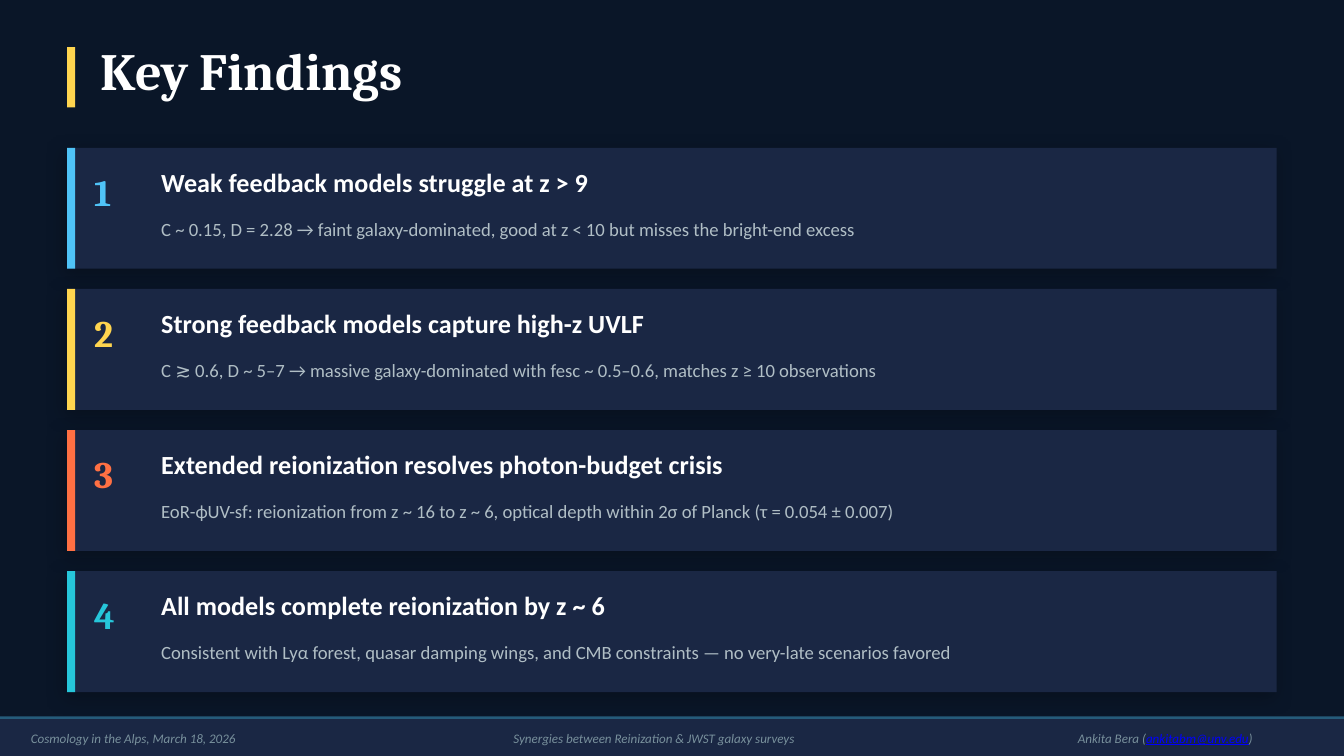
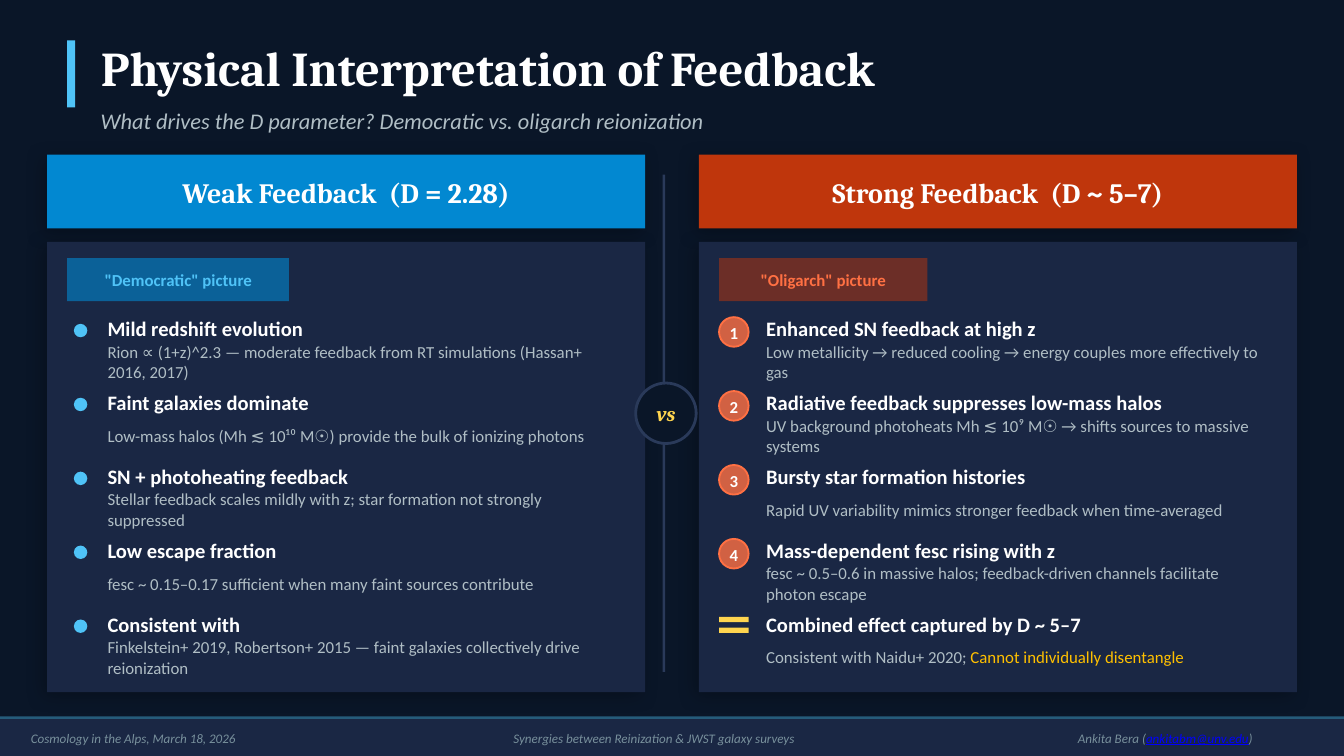
from dataclasses import dataclass

from lxml.etree import SubElement
from pptx import Presentation
from pptx.dml.color import RGBColor
from pptx.enum.shapes import MSO_SHAPE
from pptx.enum.text import MSO_ANCHOR, MSO_AUTO_SIZE, PP_ALIGN
from pptx.oxml.ns import qn
from pptx.util import Pt


@dataclass(frozen=True)
class Theme:
    night: str = "0A1628"
    panel: str = "1A2744"
    rule: str = "2A3A5A"
    white: str = "FFFFFF"
    muted: str = "B0BEC5"
    footer: str = "78909C"
    address: str = "0000FF"
    sky: str = "4FC3F7"
    blue: str = "0288D1"
    yellow: str = "FFD54F"
    amber: str = "FFC000"
    orange: str = "FF7043"
    rust: str = "BF360C"
    teal: str = "26C6DA"
    serif: str = "Cambria"
    sans: str = "Calibri"
    title_size: int = 28
    long_title_size: int = 26
    number_size: int = 20
    header_size: int = 15
    card_size: int = 14
    subtitle_size: int = 12
    point_size: int = 11
    card_detail_size: int = 10
    small_size: int = 9
    footer_size: int = 7


THEME = Theme()
WIDTH, HEIGHT = 720, 405
ACCENT_WIDTH = 4.32


class Deck:
    def __init__(self, theme):
        self.theme = theme
        self.presentation = Presentation()
        self.presentation.slide_width = Pt(WIDTH)
        self.presentation.slide_height = Pt(HEIGHT)
        background = self.presentation.slide_master.background.fill
        background.solid()
        background.fore_color.rgb = RGBColor.from_string(theme.night)
        self.slide = None

    def new_slide(self, title, size, accent, accent_top, accent_height, title_box):
        t = self.theme
        self.slide = self.presentation.slides.add_slide(
            self.presentation.slide_layouts[5])
        self.footer()
        self.block(36, accent_top, ACCENT_WIDTH, accent_height, accent)
        heading = self.slide.shapes.title
        heading.left, heading.top, heading.width, heading.height = map(Pt, title_box)
        self.fill_frame(heading.text_frame, title, size, t.white, font=t.serif,
                        bold=True)

    def block(self, left, top, width, height, color, kind=MSO_SHAPE.RECTANGLE,
              alpha=None, line=None, line_width=1, shadow=False):
        shape = self.slide.shapes.add_shape(
            kind, Pt(left), Pt(top), Pt(width), Pt(height))
        shape.shadow.inherit = False
        shape.fill.solid()
        shape.fill.fore_color.rgb = RGBColor.from_string(color)
        properties = shape._element.spPr
        if alpha:
            fill_color = properties.find(qn("a:solidFill")).find(qn("a:srgbClr"))
            self.set_alpha(fill_color, alpha)
        if line:
            shape.line.color.rgb = RGBColor.from_string(line)
            shape.line.width = Pt(line_width)
        else:
            shape.line.fill.background()
        if shadow:
            outer = SubElement(
                properties.find(qn("a:effectLst")), qn("a:outerShdw"),
                blurRad=str(Pt(10)), dist=str(Pt(3)), dir=str(135 * 60000),
                algn="bl", rotWithShape="0")
            self.set_alpha(SubElement(outer, qn("a:srgbClr"), val="000000"), 25)

    @staticmethod
    def set_alpha(color_element, percent):
        SubElement(color_element, qn("a:alpha"), val=str(percent * 1000))

    def text(self, left, top, width, height, content, size, color, **style):
        box = self.slide.shapes.add_textbox(Pt(left), Pt(top), Pt(width), Pt(height))
        self.fill_frame(box.text_frame, content, size, color, **style)

    def fill_frame(self, frame, content, size, color, font=None, bold=False,
                   italic=False, align=PP_ALIGN.LEFT, inset=0):
        """Fill a frame from a string or from (text, colour, underlined) parts."""
        parts = [(content, color, False)] if isinstance(content, str) else content
        frame.word_wrap = True
        frame.auto_size = MSO_AUTO_SIZE.NONE
        frame.vertical_anchor = MSO_ANCHOR.MIDDLE
        frame.margin_left = frame.margin_right = Pt(inset)
        frame.margin_top = frame.margin_bottom = Pt(inset)
        paragraph = frame.paragraphs[0]
        paragraph.alignment = align
        for words, part_color, underlined in parts:
            run = paragraph.add_run()
            run.text = words
            run.font.name = font or self.theme.sans
            run.font.size = Pt(size)
            run.font.bold = bold
            run.font.italic = italic
            run.font.underline = underlined
            run.font.color.rgb = RGBColor.from_string(part_color)

    def footer(self):
        t = self.theme
        self.block(0, 385.2, WIDTH, 19.8, t.panel)
        self.block(0, 383.76, WIDTH, 1.44, t.sky, alpha=40)
        contact = [("Ankita Bera (", t.footer, False),
                   ("ankitabm@unv.edu", t.address, True),
                   (")", t.footer, False)]
        for left, width, content in (
            (573.84, 113.76, contact),
            (12.96, 176.4, "Cosmology in the Alps, March 18, 2026"),
            (271.44, 176.4, "Synergies between Reinization & JWST galaxy surveys"),
        ):
            self.text(left, 388.08, width, 14.4, content, t.footer_size, t.footer,
                      italic=True, inset=3.6)

    def finding(self, top, number, color, claim, evidence):
        t = self.theme
        self.block(36, top, 648, 64.8, t.panel, shadow=True)
        self.block(36, top, ACCENT_WIDTH, 64.8, color)
        self.text(50.4, top + 12.24, 32.4, 22.32, str(number), t.number_size, color,
                  font=t.serif, bold=True)
        self.text(86.4, top + 10.8, 576, 15.12, claim, t.card_size, t.white, bold=True)
        self.text(86.4, top + 38.16, 576, 10.8, evidence, t.card_detail_size, t.muted)

    def model_column(self, left, header, header_color, picture, picture_color,
                     tag_width, tag_alpha):
        t = self.theme
        self.block(left, 82.8, 320.4, 39.6, header_color, shadow=True)
        self.text(left + 3.6, 90.72, 313.2, 24.48, header, t.header_size, t.white,
                  font=t.serif, bold=True, align=PP_ALIGN.CENTER)
        self.block(left, 129.6, 320.4, 241.2, t.panel, shadow=True)
        self.block(left + 10.8, 138.24, tag_width, 23.04, header_color, alpha=tag_alpha)
        self.text(left + 14.4, 141.84, tag_width - 7.2, 16.56, picture, t.small_size,
                  picture_color, bold=True, align=PP_ALIGN.CENTER)

    def point(self, left, top, heading, detail):
        t = self.theme
        self.text(left, top, 270, 10.8, heading, t.point_size, t.white, bold=True)
        self.text(left, top + 12.96, 270, 20.16, detail, t.small_size, t.muted)

    def dot(self, left, top):
        self.block(left, top + 2.88, 7.2, 7.2, self.theme.sky, MSO_SHAPE.OVAL)

    def numbered_circle(self, left, top, number):
        t = self.theme
        self.block(left, top - 0.72, 15.84, 15.84, t.orange, MSO_SHAPE.OVAL,
                   alpha=80, line=t.orange)
        self.text(left + 3.6, top - 0.72, 8.64, 16.56, str(number), t.small_size,
                  t.white, bold=True, align=PP_ALIGN.CENTER)

    def equals_sign(self, left, top):
        for offset in (1.44, 7.2):
            self.block(left, top + offset, 15.84, 2.88, self.theme.yellow)

    def versus(self):
        t = self.theme
        self.block(354.96, 93.6, 1.44, 266.4, t.rule)
        self.block(340.56, 205.2, 32.4, 32.4, t.night, MSO_SHAPE.OVAL,
                   line=t.rule, line_width=1.5)
        self.text(344.16, 211.68, 25.2, 19.44, "vs", t.point_size, t.yellow,
                  font=t.serif, bold=True, italic=True, align=PP_ALIGN.CENTER)


FINDINGS = [
    (THEME.sky, "Weak feedback models struggle at z > 9",
     "C ~ 0.15, D = 2.28 → faint galaxy-dominated, good at z < 10 but misses the "
     "bright-end excess"),
    (THEME.yellow, "Strong feedback models capture high-z UVLF",
     "C ≳ 0.6, D ~ 5–7 → massive galaxy-dominated with fesc ~ 0.5–0.6, matches "
     "z ≥ 10 observations"),
    (THEME.orange, "Extended reionization resolves photon-budget crisis",
     "EoR-ϕUV-sf: reionization from z ~ 16 to z ~ 6, optical depth within 2σ of "
     "Planck (τ = 0.054 ± 0.007)"),
    (THEME.teal, "All models complete reionization by z ~ 6",
     "Consistent with Lyα forest, quasar damping wings, and CMB constraints — no "
     "very-late scenarios favored"),
]

WEAK_POINTS = [
    ("Mild redshift evolution",
     "Rion ∝ (1+z)^2.3 — moderate feedback from RT simulations (Hassan+ 2016, 2017)"),
    ("Faint galaxies dominate",
     "Low-mass halos (Mh ≲ 10¹⁰ M☉) provide the bulk of ionizing photons"),
    ("SN + photoheating feedback",
     "Stellar feedback scales mildly with z; star formation not strongly suppressed"),
    ("Low escape fraction",
     "fesc ~ 0.15–0.17 sufficient when many faint sources contribute"),
    ("Consistent with",
     "Finkelstein+ 2019, Robertson+ 2015 — faint galaxies collectively drive "
     "reionization"),
]

STRONG_POINTS = [
    ("Enhanced SN feedback at high z",
     "Low metallicity → reduced cooling → energy couples more effectively to gas"),
    ("Radiative feedback suppresses low-mass halos",
     "UV background photoheats Mh ≲ 10⁹ M☉ → shifts sources to massive systems"),
    ("Bursty star formation histories",
     "Rapid UV variability mimics stronger feedback when time-averaged"),
    ("Mass-dependent fesc rising with z",
     "fesc ~ 0.5–0.6 in massive halos; feedback-driven channels facilitate photon "
     "escape"),
    ("Combined effect captured by D ~ 5–7",
     [("Consistent with Naidu+ 2020; ", THEME.muted, False),
      ("Cannot individually disentangle", THEME.amber, False)]),
]


def add_key_findings(deck):
    t = deck.theme
    deck.new_slide("Key Findings", t.title_size, t.yellow, 25.2, 32.4,
                   (54, 21.6, 576, 31.68))
    for index, (color, claim, evidence) in enumerate(FINDINGS):
        deck.finding(79.2 + index * 75.6, index + 1, color, claim, evidence)


def add_feedback_comparison(deck):
    t = deck.theme
    deck.new_slide("Physical Interpretation of Feedback", t.long_title_size, t.sky,
                   21.6, 36, (54, 20.88, 612, 30.24))
    deck.text(54, 58.32, 612, 12.24,
              "What drives the D parameter? Democratic vs. oligarch reionization",
              t.subtitle_size, t.muted, italic=True)
    deck.model_column(25.2, "Weak Feedback  (D = 2.28)", t.blue,
                      '"Democratic" picture', t.sky, 118.8, 60)
    deck.model_column(374.4, "Strong Feedback  (D ~ 5–7)", t.rust,
                      '"Oligarch" picture', t.orange, 111.6, 50)
    for index, (weak, strong) in enumerate(zip(WEAK_POINTS, STRONG_POINTS)):
        top = 170.64 + index * 39.6
        deck.dot(39.6, top)
        deck.point(57.6, top, *weak)
        if index < len(STRONG_POINTS) - 1:
            deck.numbered_circle(385.2, top, index + 1)
        else:
            deck.equals_sign(385.2, top)
        deck.point(410.4, top, *strong)
    deck.versus()


def main():
    deck = Deck(THEME)
    add_key_findings(deck)
    add_feedback_comparison(deck)
    deck.presentation.save("out.pptx")


if __name__ == "__main__":
    main()
